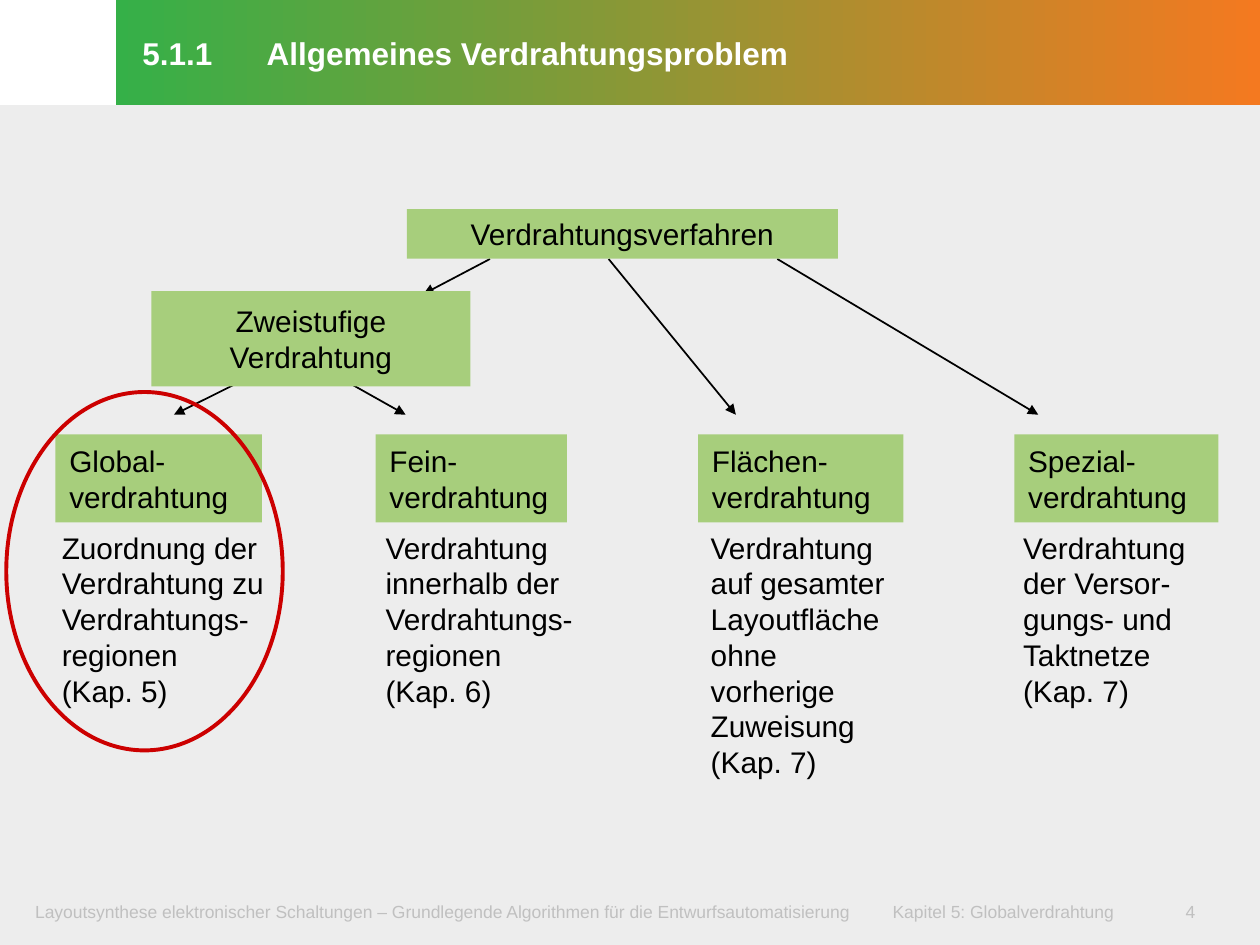
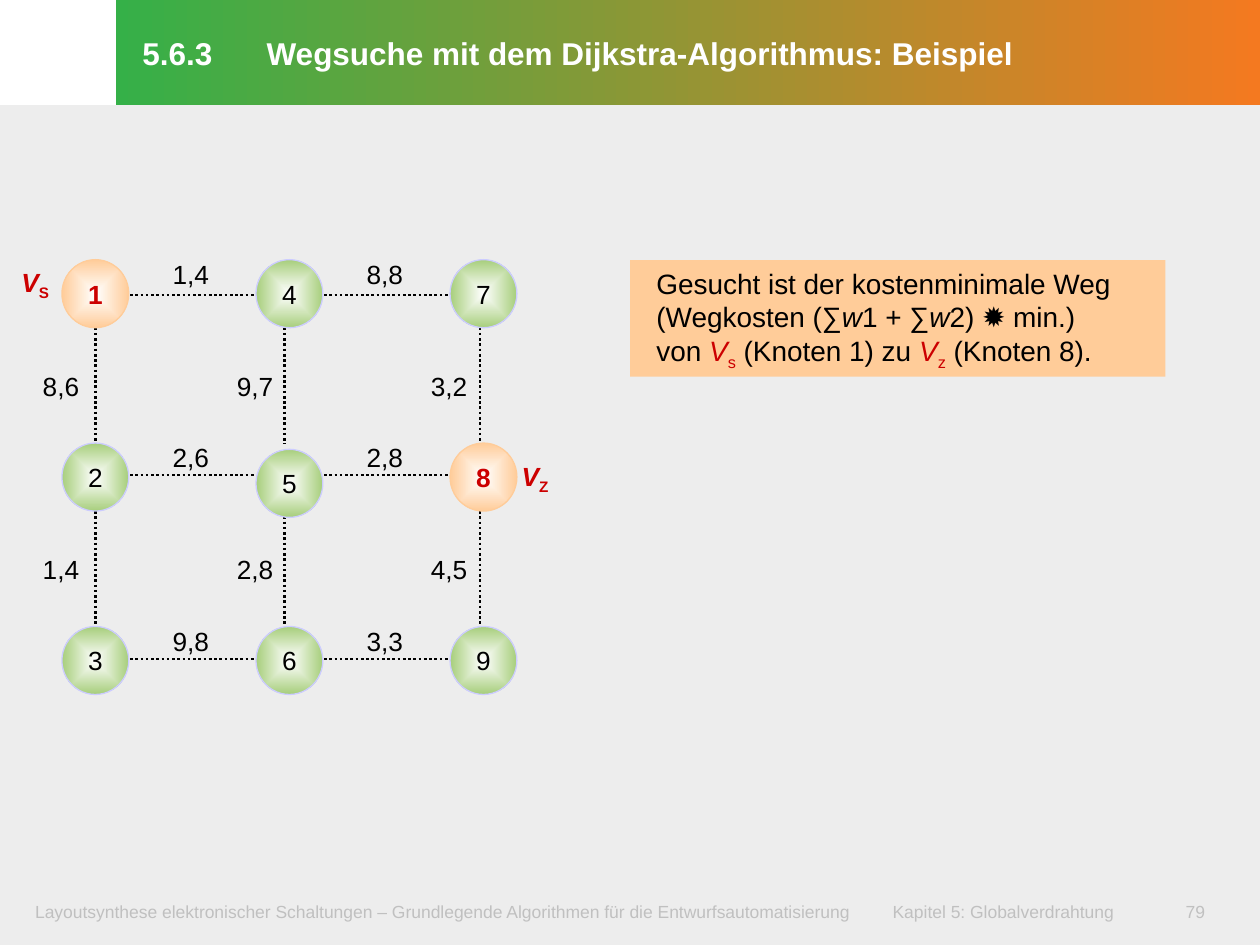
from dataclasses import dataclass
from typing import NamedTuple

from lxml.etree import SubElement
from pptx import Presentation
from pptx.dml.color import RGBColor
from pptx.enum.dml import MSO_LINE_DASH_STYLE as Dash
from pptx.enum.shapes import MSO_CONNECTOR as Connector, MSO_SHAPE as Preset
from pptx.enum.text import MSO_ANCHOR as Anchor, PP_ALIGN as Align
from pptx.oxml.ns import qn
from pptx.util import Pt

FONT = "Arial"
COLORS = {
    "black": "000000", "white": "FFFFFF", "ground": "EDEDED",
    "footer": "C0C0C0", "band_start": "35B048", "band_end": "F47920",
    "green": "A7CE7C", "peach": "FFCC99", "lilac": "CCCCFF", "red": "CC0000",
}
FOOTER = ("Layoutsynthese elektronischer Schaltungen – Grundlegende Algorithmen "
          "für die Entwurfsautomatisierung\tKapitel 5: Globalverdrahtung")


class Box(NamedTuple):
    left: float
    top: float
    width: float
    height: float


class Insets(NamedTuple):
    left: float = 7.9
    top: float = 3.6
    right: float = 7.9
    bottom: float = 3.6


class Span(NamedTuple):
    text: str
    color: str = "black"
    bold: bool = False
    italic: bool = False
    sub: bool = False


@dataclass
class TextStyle:
    size: float
    color: str = "black"
    bold: bool = False
    align: Align = Align.LEFT
    anchor: Anchor = Anchor.TOP
    insets: Insets = Insets()
    wrap: bool = True
    tab: float = 0
    spacing: float = 0


@dataclass
class Branch:
    head: str
    head_left: float
    head_width: float
    note: tuple[str, ...]
    note_left: float
    note_width: float


# Text styles
TITLE = TextStyle(18, "white", True, anchor=Anchor.MIDDLE, tab=71, spacing=23.5,
                  insets=Insets(15.1, 3.6, 7.2, 5))
FOOT = TextStyle(10, "footer", insets=Insets(8.6, 4.3, 8.6, 4.3), tab=490)
HEAD = TextStyle(17, anchor=Anchor.MIDDLE, insets=Insets(7.9, 7.2, 7.9, 7.2))
CENTER = TextStyle(17, align=Align.CENTER, anchor=Anchor.MIDDLE)
NOTE = TextStyle(17, wrap=False)
WEIGHT = TextStyle(15)
CALLOUT = TextStyle(16, insets=Insets(15.1, 3.6, 7.2, 5))

# Routing methods
BRANCHES = (
    Branch("Global-\nverdrahtung", 31.7, 118,
           ("Zuordnung der", "Verdrahtung zu", "Verdrahtungs-", "regionen",
            "(Kap. 5)"), 27.4, 131.8),
    Branch("Fein-\nverdrahtung", 214.6, 109.4,
           ("Verdrahtung", "innerhalb der", "Verdrahtungs-", "regionen",
            "(Kap. 6)"), 212.4, 123.1),
    Branch("Flächen-\nverdrahtung", 398.9, 117.4,
           ("Verdrahtung", "auf gesamter", "Layoutfläche", "ohne vorherige",
            "Zuweisung", "(Kap. 7)"), 398.2, 128.9),
    Branch("Spezial-\nverdrahtung", 579.6, 116.6,
           ("Verdrahtung", "der Versor-", "gungs- und\nTaktnetze",
            "(Kap. 7)"), 576.7, 109.4),
)
ARROWS = (
    (280, 148, 242, 168), (347.8, 148, 420.5, 237), (444.2, 148, 593.3, 237),
    (137.5, 218, 99.4, 237), (198, 218, 231.8, 237),
)

# Grid graph
PITCH_X, PITCH_Y = 110.9, 104.8
NODE_LEFT, NODE_TOP = 35.4, 148.4
TERMINALS = (1, 8)
EDGE_X = (54.7, 162.7, 274.3)
EDGE_Y = (168.5, 271.4, 376.6)
ACROSS = (("1,4", "8,8"), ("2,6", "2,8"), ("9,8", "3,3"))
DOWN = (("8,6", "9,7", "3,2"), ("1,4", "2,8", "4,5"))


def rgb(name: str) -> RGBColor:
    return RGBColor.from_string(COLORS[name])


def write(shape, paragraphs, style: TextStyle) -> None:
    """Fill a shape with paragraphs, each a string or a sequence of spans."""
    frame = shape.text_frame
    frame.word_wrap = style.wrap
    frame.vertical_anchor = style.anchor
    frame.margin_left, frame.margin_top, frame.margin_right, frame.margin_bottom = (
        Pt(inset) for inset in style.insets)
    for index, content in enumerate(paragraphs):
        para = frame.add_paragraph() if index else frame.paragraphs[0]
        para.alignment = style.align
        if style.spacing:
            para.line_spacing = Pt(style.spacing)
        if style.tab:
            tabs = SubElement(para._p.get_or_add_pPr(), qn("a:tabLst"))
            SubElement(tabs, qn("a:tab"), pos=str(Pt(style.tab)), algn="l")
        para.font.name, para.font.size = FONT, Pt(style.size)
        if isinstance(content, str):
            para.text = content
            para.font.bold = style.bold
            para.font.color.rgb = rgb(style.color)
            continue
        for span in content:
            run = para.add_run()
            run.text = span.text
            run.font.bold, run.font.italic = span.bold, span.italic
            run.font.color.rgb = rgb(span.color)
            if span.sub:
                run._r.get_or_add_rPr().set("baseline", "-25000")


def add_text(slide, box: Box, paragraphs, style: TextStyle) -> None:
    write(slide.shapes.add_textbox(*map(Pt, box)), paragraphs, style)


def add_preset(slide, box: Box, fill: str = "", line: str = "",
               weight: float = 0.75, preset: Preset = Preset.RECTANGLE):
    shape = slide.shapes.add_shape(preset, *map(Pt, box))
    shape.shadow.inherit = False
    if fill:
        shape.fill.solid()
        shape.fill.fore_color.rgb = rgb(fill)
    else:
        shape.fill.background()
    if line:
        shape.line.color.rgb = rgb(line)
        shape.line.width = Pt(weight)
    else:
        shape.line.fill.background()
    return shape


def set_gradient(shape, start: str, end: str, radial: bool = False) -> None:
    shape.fill.gradient()
    shape.fill.gradient_angle = 0
    for stop, color, position in zip(shape.fill.gradient_stops, (start, end), (0, 1)):
        stop.color.rgb = rgb(color)
        stop.position = position
    if radial:
        gradient = shape._element.spPr.find(qn("a:gradFill"))
        gradient.remove(gradient.find(qn("a:lin")))
        shade = SubElement(gradient, qn("a:path"))
        shade.set("path", "shape")
        SubElement(shade, qn("a:fillToRect"),
                   {side: "50000" for side in ("l", "t", "r", "b")})


def add_line(slide, ends, weight: float, arrow: bool = False) -> None:
    line = slide.shapes.add_connector(Connector.STRAIGHT, *map(Pt, ends))
    line.line.color.rgb = rgb("black")
    line.line.width = Pt(weight)
    if arrow:
        SubElement(line.line._get_or_add_ln(), qn("a:tailEnd"), type="triangle")
    else:
        line.line.dash_style = Dash.ROUND_DOT
    SubElement(line._element.spPr, qn("a:effectLst"))


def add_base(prs, number: str, title: str, page: str):
    """Add a slide with ground, title band and footer."""
    slide = prs.slides.add_slide(prs.slide_layouts[6])
    add_preset(slide, Box(0, 60, 720, 480), "ground")
    add_text(slide, Box(11.5, 510.5, 681, 23), [FOOTER], FOOT)
    add_text(slide, Box(668.9, 510.5, 42.5, 23), [page], FOOT)
    band = add_preset(slide, Box(66.25, 0, 653.75, 60))
    set_gradient(band, "band_start", "band_end")
    write(band, [f"{number}\t{title}"], TITLE)
    return slide


def build_methods(prs) -> None:
    slide = add_base(prs, "5.1.1", "Allgemeines Verdrahtungsproblem", "4")
    for ends in ARROWS:
        add_line(slide, ends, 1, arrow=True)
    # Upper levels
    for label, box in (("Verdrahtungsverfahren", Box(232.5, 119.6, 246.3, 28.3)),
                       ("Zweistufige Verdrahtung", Box(86.5, 166.4, 182.3, 54.4))):
        write(add_preset(slide, box, "green"), [label], CENTER)
    # Lowest level with explanations
    for branch in BRANCHES:
        head = add_preset(slide, Box(branch.head_left, 248.2, branch.head_width, 50.3),
                          "green")
        write(head, [branch.head], HEAD)
        lines = sum(len(part.split("\n")) for part in branch.note)
        add_text(slide, Box(branch.note_left, 299, branch.note_width, 7.2 + 20.4 * lines),
                 branch.note, NOTE)
    # Highlight of this chapter
    add_preset(slide, Box(3.6, 224, 158, 204.8), line="red", weight=2.25,
               preset=Preset.OVAL)


def add_node(slide, number: int) -> None:
    column, row = divmod(number - 1, 3)
    lowered = 3.6 if number == 5 else 0
    terminal = number in TERMINALS
    fill, line = ("peach", "peach") if terminal else ("green", "lilac")
    node = add_preset(slide, Box(NODE_LEFT + column * PITCH_X,
                                 NODE_TOP + row * PITCH_Y + lowered, 38.2, 38.9),
                      line=line, preset=Preset.OVAL)
    set_gradient(node, "white", fill, radial=True)
    write(node, [str(number)],
          TextStyle(15, "red" if terminal else "black", terminal, Align.CENTER,
                    Anchor.MIDDLE, Insets(0, 0, 0, 0), wrap=False))


def add_weight(slide, left: float, top: float, content) -> None:
    add_text(slide, Box(left, top, 41.8, 25.2), [content], WEIGHT)


def build_dijkstra(prs) -> None:
    slide = add_base(prs, "5.6.3", "Wegsuche mit dem Dijkstra-Algorithmus: Beispiel", "79")
    # Edges with weights
    for row, weights in enumerate(ACROSS):
        for column, weight in enumerate(weights):
            start = 71.3 + column * PITCH_X
            add_line(slide, (start, EDGE_Y[row], start + 75, EDGE_Y[row]), 1.5)
            add_weight(slide, 90.7 + column * PITCH_X, 144 + row * PITCH_Y, weight)
    for row, weights in enumerate(DOWN):
        for column, weight in enumerate(weights):
            start = 187.2 + row * PITCH_Y
            add_line(slide, (EDGE_X[column], start, EDGE_X[column], start + 66.2), 1.5)
            add_weight(slide, 16.5 + column * PITCH_X, 208.1 + row * PITCH_Y, weight)
    # Nodes, numbered down the columns
    for number in range(1, 10):
        add_node(slide, number)
    for left, top, index in ((4.3, 148.4, "S"), (290.2, 259.2, "Z")):
        add_weight(slide, left, top, (Span("V", "red", True, True),
                                      Span(index, "red", True, sub=True)))
    # Task
    task = add_preset(slide, Box(360, 148.6, 306, 66.6), "peach")
    write(task, [
        (Span("Gesucht ist der kostenminimale Weg (Wegkosten (∑"),
         Span("w", italic=True), Span("1 + ∑"), Span("w", italic=True),
         Span("2) ✹ min.)")),
        (Span("von "), Span("V", "red", italic=True), Span("s", "red", sub=True),
         Span(" (Knoten 1) zu "), Span("V", "red", italic=True),
         Span("z", "red", sub=True), Span(" (Knoten 8).")),
    ], CALLOUT)


def main() -> None:
    prs = Presentation()
    prs.slide_width, prs.slide_height = Pt(720), Pt(540)
    build_methods(prs)
    build_dijkstra(prs)
    prs.save("out.pptx")


if __name__ == "__main__":
    main()
